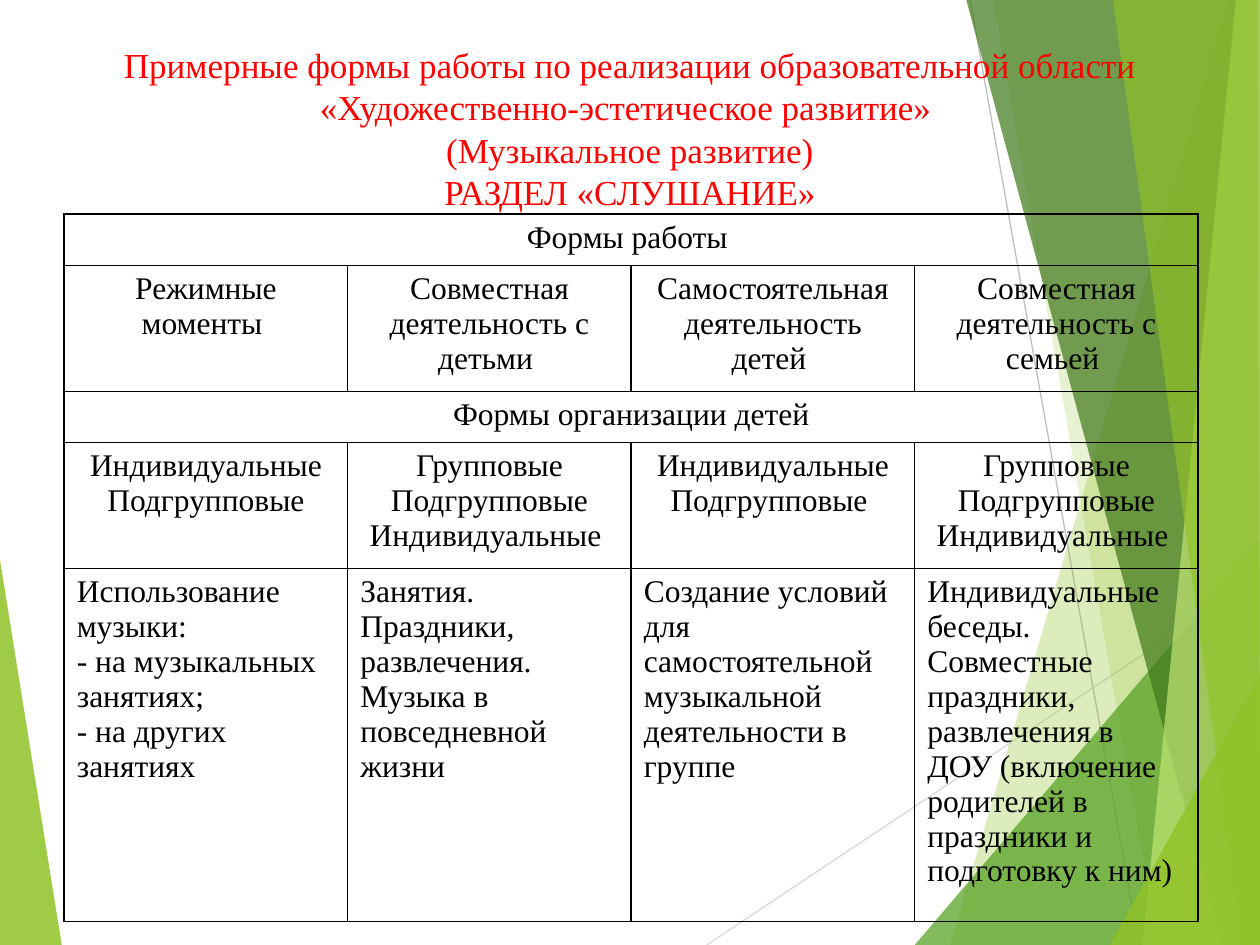
from lxml.etree import SubElement
from pptx import Presentation
from pptx.dml.color import RGBColor
from pptx.enum.text import MSO_ANCHOR as Anchor, PP_ALIGN as Align
from pptx.enum.shapes import MSO_CONNECTOR as Connector
from pptx.oxml.ns import qn
from pptx.util import Pt

WIDTH, HEIGHT = 720, 540
FONT = "Times New Roman"

# Facets: colour, opacity in percent, corner points
LEFT_FACET = ("90C226", 85, [(0, 320), (35.3, 540), (0, 540)])
RIGHT_FACETS = [
    ("90C226", 30, [(702, 0), (542.9, 540), (720, 540), (720, 0)]),
    ("90C226", 20, [(567.4, 0), (661.7, 540), (720, 540), (720, 0)]),
    ("54A021", 72, [(522.7, 540), (720, 309), (720, 540)]),
    ("3F7819", 70, [(552.2, 0), (698.4, 540), (720, 540), (720, 0)]),
    ("C0E474", 70, [(706.3, 0), (653, 540), (720, 540), (720, 0)]),
    ("90C226", 65, [(636, 0), (709.9, 540), (720, 540), (718.6, 0)]),
    ("90C226", 80, [(634.3, 540), (720, 385.2), (720, 540)]),
]
RAYS = [("D9D9D9", (403.9, 540), (720, 329.5)),
        ("BFBFBF", (554.4, 0), (650.9, 540))]

TITLE = ("Примерные формы работы по реализации образовательной области "
         "«Художественно-эстетическое развитие» \v(Музыкальное развитие)\v"
         "РАЗДЕЛ «СЛУШАНИЕ»")

# A row with a single text spans the whole table
ROWS = [
    (29.2, Align.CENTER, ["Формы работы "]),
    (67, Align.CENTER, ["Режимные моменты ",
                        "Совместная деятельность с детьми ",
                        "Самостоятельная деятельность детей ",
                        "Совместная деятельность с семьей "]),
    (29.2, Align.CENTER, ["Формы организации детей"]),
    (67, Align.CENTER, ["Индивидуальные Подгрупповые",
                        "Групповые Подгрупповые Индивидуальные ",
                        "Индивидуальные Подгрупповые ",
                        "Групповые Подгрупповые Индивидуальные "]),
    (186.8, Align.LEFT, [
        "Использование музыки:\n- на музыкальных занятиях;\n- на других занятиях",
        "Занятия. Праздники, развлечения. Музыка в повседневной жизни",
        "Создание условий для самостоятельной музыкальной деятельности в группе",
        "Индивидуальные беседы. Совместные праздники, развлечения в ДОУ "
        "(включение родителей в праздники и подготовку к ним)"]),
]
COLUMNS = 4


def color(value):
    return RGBColor.from_string(value)


def write(text_frame, text, size, text_color, align):
    text_frame.text = text
    for paragraph in text_frame.paragraphs:
        paragraph.alignment = align
        for run in paragraph.runs:
            for name, value in {"name": FONT, "size": Pt(size), "bold": False}.items():
                setattr(run.font, name, value)
            run.font.color.rgb = color(text_color)


def add_facet(slide, left, top, facet):
    fill_color, opacity, points = facet
    corners = [(Pt(left + x), Pt(top + y)) for x, y in points]
    builder = slide.shapes.build_freeform(*corners[0], scale=1.0)
    builder.add_line_segments(corners[1:], close=True)
    shape = builder.convert_to_shape()
    shape.shadow.inherit = False
    shape.line.fill.background()
    shape.fill.solid()
    shape.fill.fore_color.rgb = color(fill_color)
    # Transparency
    for fill in shape._element.spPr.iter(qn("a:srgbClr")):
        SubElement(fill, qn("a:alpha"), val=str(opacity * 1000))


def add_ray(slide, left, top, ray):
    line_color, (x1, y1), (x2, y2) = ray
    connector = slide.shapes.add_connector(
        Connector.STRAIGHT, Pt(left + x1), Pt(top + y1), Pt(left + x2), Pt(top + y2))
    connector.line.width = Pt(0.75)
    connector.line.color.rgb = color(line_color)
    SubElement(connector._element.spPr, qn("a:effectLst"))


def add_backdrop(slide, left, top):
    add_facet(slide, left, top, LEFT_FACET)
    for ray in RAYS:
        add_ray(slide, left, top, ray)
    for facet in RIGHT_FACETS:
        add_facet(slide, left, top, facet)


def add_title(slide, left, top, width, height):
    text_frame = slide.shapes.add_textbox(
        Pt(left), Pt(top), Pt(width), Pt(height)).text_frame
    text_frame.word_wrap = True
    text_frame.vertical_anchor = Anchor.TOP
    write(text_frame, TITLE, 20, "FF0000", Align.CENTER)


def format_cell(cell):
    properties = cell._tc.get_or_add_tcPr()
    for side in ("lnL", "lnR", "lnT", "lnB"):
        border = SubElement(properties, qn(f"a:{side}"), w=str(Pt(1)))
        fill = SubElement(border, qn("a:solidFill"))
        SubElement(fill, qn("a:srgbClr"), val="000000")
    cell.fill.background()


def add_forms_table(slide, left, top, width):
    height = sum(row_height for row_height, _, _ in ROWS)
    table = slide.shapes.add_table(
        len(ROWS), COLUMNS, Pt(left), Pt(top), Pt(width), Pt(height)).table
    table.first_row = table.horz_banding = False
    for column in table.columns:
        column.width = Pt(width / COLUMNS)
    for index, (row_height, align, texts) in enumerate(ROWS):
        table.rows[index].height = Pt(row_height)
        for cell in table.rows[index].cells:
            format_cell(cell)
        if len(texts) == 1:
            table.cell(index, 0).merge(table.cell(index, COLUMNS - 1))
        for column, text in enumerate(texts):
            write(table.cell(index, column).text_frame, text, 18, "000000", align)


def main():
    presentation = Presentation()
    presentation.slide_width, presentation.slide_height = Pt(WIDTH), Pt(HEIGHT)
    slide = presentation.slides.add_slide(presentation.slide_layouts[6])
    add_backdrop(slide, 0, 0)
    add_title(slide, 36, 21.6, 648, 124)
    add_forms_table(slide, 36.7, 122.4, 648)
    presentation.save("out.pptx")


if __name__ == "__main__":
    main()
